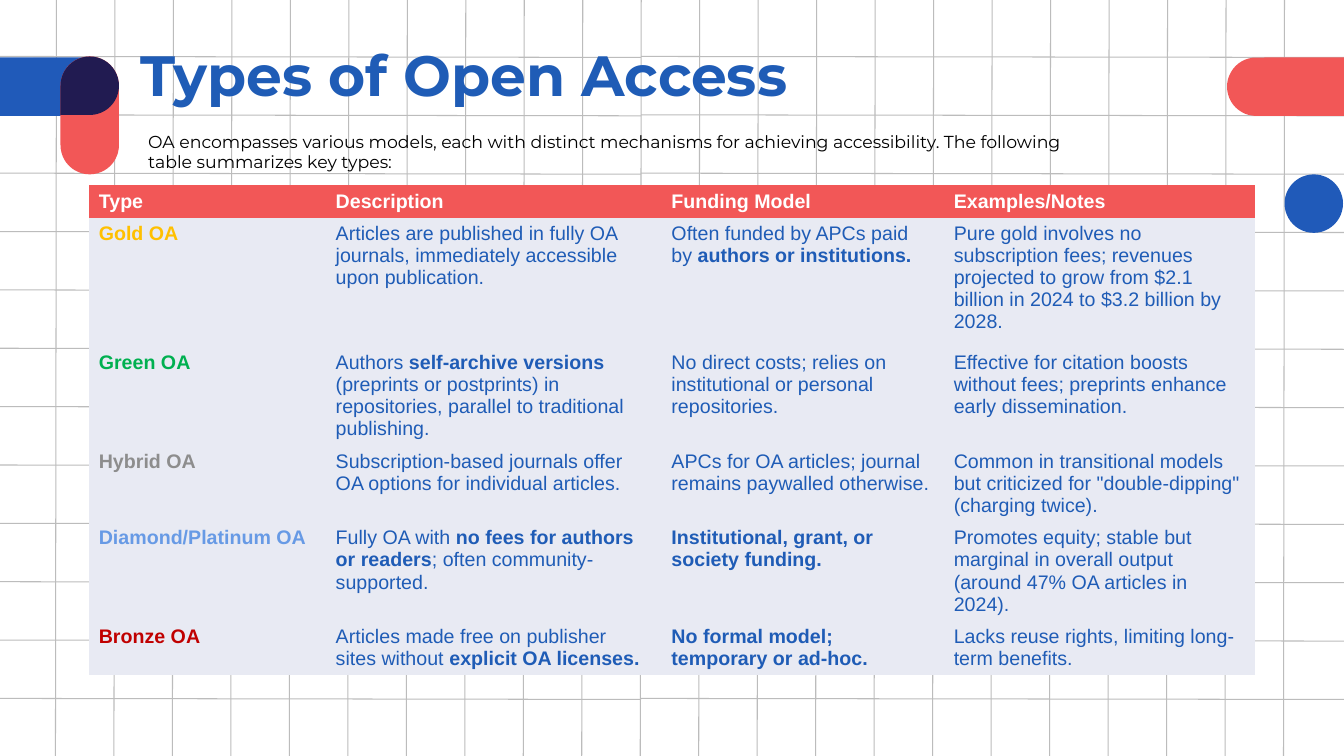
from pptx import Presentation
from pptx.util import Inches, Pt
from pptx.dml.color import RGBColor
from pptx.enum import shapes, text
from pptx.oxml import xmlchemy as xml

BLUE, CORAL, NAVY = "205AB9", "F25757", "211B51"
INK, GREY, PALE = "1F5CB6", "BCBCBC", "E8EAF3"
TITLE = "Types of Open Access"
INTRO = ("OA encompasses various models, each with distinct mechanisms for achieving "
         "accessibility. The following table summarizes key types:")
HEAD = ["Type", "Description", "Funding Model", "Examples/Notes"]
ROWS = [
    ("FFC000", "Gold OA",
     "Articles are published in fully OA journals, immediately accessible upon publication.",
     "Often funded by APCs paid by *authors or institutions.*",
     "Pure gold involves no subscription fees; revenues projected to grow from $2.1 billion "
     "in 2024 to $3.2 billion by 2028."),
    ("00B050", "Green OA",
     "Authors *self-archive versions *(preprints or postprints) in repositories, parallel "
     "to traditional publishing.",
     "No direct costs; relies on institutional or personal repositories.",
     "Effective for citation boosts without fees; preprints enhance early dissemination."),
    ("8D8D8D", "Hybrid OA",
     "Subscription-based journals offer OA options for individual articles.",
     "APCs for OA articles; journal remains paywalled otherwise.",
     'Common in transitional models but criticized for "double-dipping" (charging twice).'),
    ("679AE5", "Diamond/Platinum OA",
     "Fully OA with *no fees for authors or readers*; often community-supported.",
     "*Institutional, grant, or society funding.*",
     "Promotes equity; stable but marginal in overall output (around 47% OA articles in 2024)."),
    ("C00000", "Bronze OA",
     "Articles made free on publisher sites without *explicit OA licenses.*",
     "*No formal model; temporary or ad-hoc.*",
     "Lacks reuse rights, limiting long-term benefits."),
]
WIDTHS = [2.35, 3.33, 2.8, 3.09]
HEIGHTS = [0.32, 1.28, 0.98, 0.76, 0.76, 0.54]
KIND = shapes.MSO_SHAPE
DECOR = [
    (KIND.ROUND_2_SAME_RECTANGLE, (0.29, 0.28, 0.58, 1.16), 90, BLUE, [0.5, 0]),
    (KIND.ROUNDED_RECTANGLE, (0.6, 0.56, 0.58, 1.17), 0, CORAL, [0.5]),
    (KIND.TEAR, (0.6, 0.56, 0.58, 0.58), 180, NAVY, [1]),
    (KIND.ROUND_2_SAME_RECTANGLE, (12.46, 0.28, 0.58, 1.16), 270, CORAL, [0.5, 0]),
    (KIND.OVAL, (12.74, 1.73, 0.58, 0.58), 0, BLUE, []),
]
WIDE, HIGH, MID, STEP = 13.33, 7.5, 6.36, 0.58


def paint(target, color):
    target.fill.solid()
    target.fill.fore_color.rgb = RGBColor.from_string(color)


def style(font, name, size, color, bold):
    font.name, font.size, font.bold = name, Pt(size), bold
    font.color.rgb = RGBColor.from_string(color)


def rule(slide, *ends):
    line = slide.shapes.add_connector(shapes.MSO_CONNECTOR.STRAIGHT, *map(Inches, ends))
    line.line.color.rgb = RGBColor.from_string(GREY)
    line.line.width = Pt(0.75)
    props = line.element.spPr
    props.append(props.makeelement(xml.qn("a:effectLst"), {}))


def grid(slide):
    for i in range(22):
        x = 0.55 + i * STEP
        rule(slide, x + 0.01, 0, x, HIGH)
    for i in range(12):
        y = 0.56 + i * 0.579
        for left, right in ((0, MID), (MID, WIDE)):
            rule(slide, right, y + 0.01, left, y)


def decor(slide):
    for kind, box, turn, color, bends in DECOR:
        shape = slide.shapes.add_shape(kind, *map(Inches, box))
        shape.shadow.inherit = False
        shape.rotation = turn
        for i, bend in enumerate(bends):
            shape.adjustments[i] = bend
        paint(shape, color)
        shape.line.fill.background()


def fill(cell, words, back, color, bold=False):
    paint(cell, back)
    para = cell.text_frame.paragraphs[0]
    for i, part in enumerate(words.split("*")):
        if part:
            run = para.add_run()
            run.text = part
            style(run.font, "Arial", 14, color, bold or i % 2 == 1)


def table(slide):
    frame = slide.shapes.add_table(len(HEIGHTS), len(WIDTHS), Inches(0.88), Inches(1.84),
                                   Inches(sum(WIDTHS)), Inches(sum(HEIGHTS)))
    sheet = frame.table
    for col, size in zip(sheet.columns, WIDTHS):
        col.width = Inches(size)
    for row, size in zip(sheet.rows, HEIGHTS):
        row.height = Inches(size)
    borders(sheet)
    for c, words in enumerate(HEAD):
        fill(sheet.cell(0, c), words, CORAL, "FFFFFF", True)
    for r, (tint, *cells) in enumerate(ROWS, 1):
        for c, words in enumerate(cells):
            fill(sheet.cell(r, c), words, PALE, INK if c else tint, c == 0)


def borders(sheet):
    for cell in sheet.iter_cells():
        props = cell._tc.get_or_add_tcPr()
        for side in ("a:lnL", "a:lnR", "a:lnT", "a:lnB"):
            edge = props.makeelement(xml.qn(side), {"w": "0"})
            edge.append(edge.makeelement(xml.qn("a:noFill"), {}))
            props.append(edge)


def write(shape, box, words, size, color, bold, gap):
    shape.left, shape.top, shape.width, shape.height = map(Inches, box)
    frame = shape.text_frame
    frame.text = words
    frame.word_wrap = True
    frame.auto_size = text.MSO_AUTO_SIZE.NONE
    frame.vertical_anchor = text.MSO_ANCHOR.TOP
    frame.margin_left = frame.margin_right = Inches(0.13)
    frame.margin_top = frame.margin_bottom = Inches(0.13)
    para = frame.paragraphs[0]
    para.alignment = text.PP_ALIGN.LEFT
    para.line_spacing = gap
    style(para.runs[0].font, "Montserrat", size, color, bold)
    return para


def main():
    deck = Presentation()
    deck.slide_width, deck.slide_height = Inches(WIDE), Inches(HIGH)
    slide = deck.slides.add_slide(deck.slide_layouts[5])
    grid(slide)
    decor(slide)
    table(slide)
    title = slide.shapes.title
    title.element.getparent().append(title.element)
    write(title, (1.26, 0.4, 9.73, 0.55), TITLE, 40.5, INK, True, 0.8)
    box = (1.26, 1.19, 9.73, 0.65)
    intro = slide.shapes.add_textbox(*map(Inches, box))
    para = write(intro, box, INTRO, 12.4, "000000", False, 0.95)
    para._p.get_or_add_pPr().set("marL", str(Inches(0.08)))
    deck.save("out.pptx")


if __name__ == "__main__":
    main()
